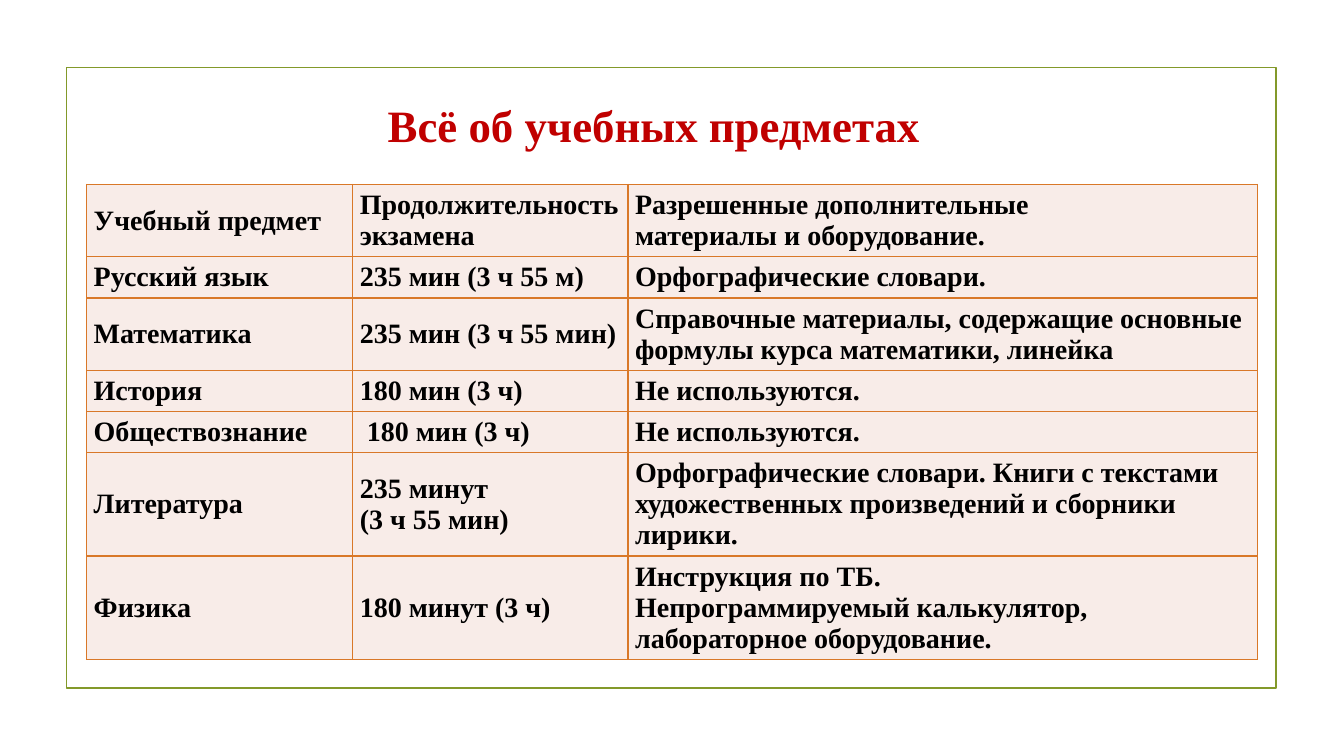
from lxml.etree import SubElement as Sub
from pptx import Presentation
from pptx.dml.color import RGBColor as RGB
from pptx.enum.shapes import MSO_SHAPE as SHAPE
from pptx.enum.text import MSO_ANCHOR as ANCHOR, PP_ALIGN as ALIGN
from pptx.oxml.ns import qn
from pptx.util import Inches, Pt

WIDTH, HEIGHT = Inches(13.33), Inches(7.5)
COLORS = {"frame": "83992A", "border": "D97828", "cell": "F8ECE8",
          "title": "C00000", "text": "000000"}
TITLE_FONT = {"name": "Times New Roman", "size": Pt(32), "bold": True}
CELL_FONT = {**TITLE_FONT, "size": Pt(20)}
CELL_FORMAT = {"margin_left": Inches(0.07), "margin_right": Inches(0.07),
               "margin_top": Inches(0.05), "margin_bottom": Inches(0.05),
               "vertical_anchor": ANCHOR.MIDDLE}

# Column widths in percent of the slide width; rows as text lines
COLUMNS = [19.8, 20.48, 46.81]
ROW_LINES = [2, 1, 2, 1, 1, 3, 3]
LINE_HEIGHT, ROW_PADDING = 4, 1.33
SUBJECTS = [
    ("Учебный предмет", "Продолжительность\nэкзамена",
     "Разрешенные дополнительные\nматериалы и оборудование."),
    ("Русский язык", "235 мин (3 ч 55 м)", "Орфографические словари."),
    ("Математика", "235 мин (3 ч 55 мин)",
     "Справочные материалы, содержащие основные формулы курса математики, линейка"),
    ("История", "180 мин (3 ч)", "Не используются."),
    ("Обществознание", " 180 мин (3 ч)", "Не используются."),
    ("Литература", "235 минут\n(3 ч 55 мин)",
     "Орфографические словари. Книги с текстами художественных произведений "
     "и сборники лирики."),
    ("Физика", "180 минут (3 ч)",
     "Инструкция по ТБ.\nНепрограммируемый калькулятор, лабораторное оборудование."),
]


def across(percent):
    return round(WIDTH * percent / 100)


def down(percent):
    return round(HEIGHT * percent / 100)


def area(left, top, width, height):
    return across(left), down(top), across(width), down(height)


def apply(target, values):
    for name, value in values.items():
        setattr(target, name, value)


def style_text(tf, font, color):
    for p in tf.paragraphs:
        for r in p.runs:
            apply(r.font, font)
            r.font.color.rgb = RGB.from_string(COLORS[color])


def add_frame(s, box):
    sp = s.shapes.add_shape(SHAPE.RECTANGLE, *box)
    sp.shadow.inherit = False
    sp.fill.background()
    sp.line.color.rgb = RGB.from_string(COLORS["frame"])
    sp.line.width = Pt(1.25)


def add_title(s, box, text):
    tf = s.shapes.add_textbox(*box).text_frame
    tf.word_wrap = True
    tf.text = text
    tf.paragraphs[0].alignment = ALIGN.CENTER
    style_text(tf, TITLE_FONT, "title")


def add_borders(cell):
    props = cell._tc.get_or_add_tcPr()
    for side in ("lnL", "lnR", "lnT", "lnB"):
        line = Sub(props, qn(f"a:{side}"), w=str(Pt(0.96)))
        Sub(Sub(line, qn("a:solidFill")), qn("a:srgbClr"), val=COLORS["border"])


def fill_cell(cell, text):
    cell.text = text
    apply(cell, CELL_FORMAT)
    style_text(cell.text_frame, CELL_FONT, "text")
    add_borders(cell)
    cell.fill.solid()
    cell.fill.fore_color.rgb = RGB.from_string(COLORS["cell"])


def add_subject_table(s, left, top):
    heights = [ROW_PADDING + LINE_HEIGHT * lines for lines in ROW_LINES]
    box = area(left, top, sum(COLUMNS), sum(heights))
    table = s.shapes.add_table(len(SUBJECTS), len(COLUMNS), *box).table
    apply(table, {"first_row": False, "horz_banding": False})
    for column, width in zip(table.columns, COLUMNS):
        column.width = across(width)
    for row, height, texts in zip(table.rows, heights, SUBJECTS):
        row.height = down(height)
        for cell, text in zip(row.cells, texts):
            fill_cell(cell, text)


def main():
    prs = Presentation()
    apply(prs, {"slide_width": WIDTH, "slide_height": HEIGHT})
    s = prs.slides.add_slide(prs.slide_layouts[6])
    add_frame(s, area(4.95, 8.93, 90.02, 82.13))
    add_subject_table(s, 6.45, 24.4)
    add_title(s, area(6.53, 12.27, 84.25, 8.4), "Всё об учебных предметах")
    prs.save("out.pptx")


if __name__ == "__main__":
    main()
